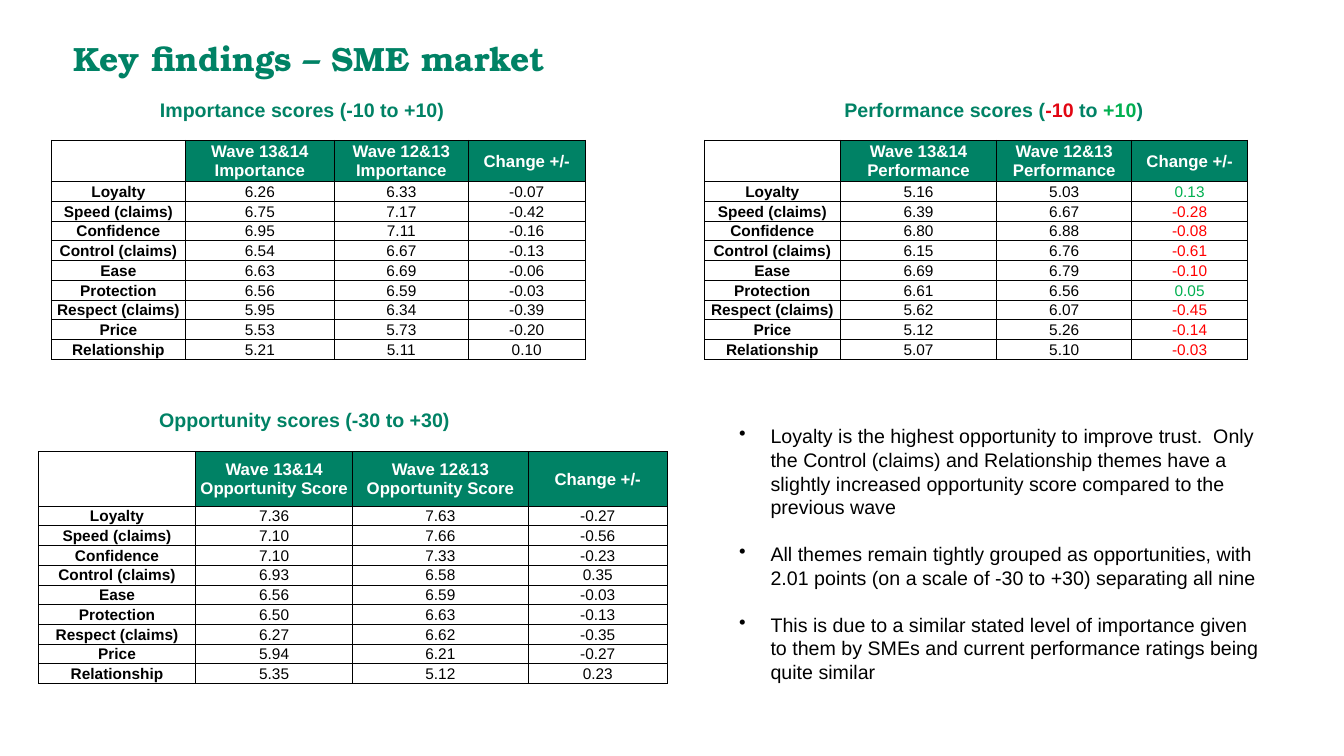
from dataclasses import dataclass

from lxml.etree import SubElement
from pptx import Presentation
from pptx.dml.color import RGBColor
from pptx.enum.text import MSO_ANCHOR as Anchor, MSO_AUTO_SIZE as AutoSize, PP_ALIGN as Align
from pptx.oxml.ns import qn
from pptx.util import Cm, Pt


@dataclass(frozen=True)
class Theme:
    green: str = "008265"
    gain: str = "00B050"
    loss: str = "FF0000"
    scale_red: str = "E20613"
    black: str = "000000"
    white: str = "FFFFFF"
    title_font: str = "TeX Gyre Bonum"
    body_font: str = "Arial"
    title_size: int = 24
    text_size: int = 14
    header_size: int = 12
    score_size: int = 11
    border: float = 0.5


THEME = Theme()

THEMES = ["Loyalty", "Speed (claims)", "Confidence", "Control (claims)", "Ease",
          "Protection", "Respect (claims)", "Price", "Relationship"]

# Scores per theme: wave 13&14, then wave 12&13
IMPORTANCE = [(6.26, 6.33), (6.75, 7.17), (6.95, 7.11), (6.54, 6.67), (6.63, 6.69),
              (6.56, 6.59), (5.95, 6.34), (5.53, 5.73), (5.21, 5.11)]
PERFORMANCE = [(5.16, 5.03), (6.39, 6.67), (6.80, 6.88), (6.15, 6.76), (6.69, 6.79),
               (6.61, 6.56), (5.62, 6.07), (5.12, 5.26), (5.07, 5.10)]
OPPORTUNITY = [(7.36, 7.63), (7.10, 7.66), (7.10, 7.33), (6.93, 6.58), (6.56, 6.59),
               (6.50, 6.63), (6.27, 6.62), (5.94, 6.21), (5.35, 5.12)]

FINDINGS = [
    "Loyalty is the highest opportunity to improve trust.  Only the Control (claims) and "
    "Relationship themes have a slightly increased opportunity score compared to the "
    "previous wave",
    "All themes remain tightly grouped as opportunities, with 2.01 points (on a scale of "
    "-30 to +30) separating all nine",
    "This is due to a similar stated level of importance given to them by SMEs and current "
    "performance ratings being quite similar",
]


def write(paragraph, text, size=THEME.text_size, color=THEME.black, bold=False,
          font=THEME.body_font, align=Align.LEFT):
    paragraph.alignment = align
    run = paragraph.add_run()
    run.text = text
    run.font.size = Pt(size)
    run.font.bold = bold
    run.font.name = font
    run.font.color.rgb = RGBColor.from_string(color)


def add_bullet(paragraph):
    props = paragraph._p.get_or_add_pPr()
    props.set("marL", str(Cm(1.42)))
    props.set("indent", str(Cm(-0.79)))
    SubElement(SubElement(props, qn("a:buClr")), qn("a:srgbClr"), val=THEME.black)
    SubElement(props, qn("a:buChar"), char="•")


def add_borders(cell):
    props = cell._tc.get_or_add_tcPr()
    for position, side in enumerate(("a:lnL", "a:lnR", "a:lnT", "a:lnB")):
        line = props.makeelement(qn(side), {"w": str(Pt(THEME.border))})
        fill = SubElement(line, qn("a:solidFill"))
        SubElement(fill, qn("a:srgbClr"), val=THEME.black)
        props.insert(position, line)


def add_text_box(slide, left, top, width, height):
    frame = slide.shapes.add_textbox(Cm(left), Cm(top), Cm(width), Cm(height)).text_frame
    frame.word_wrap = True
    return frame


def add_heading(slide, left, top, width, parts):
    paragraph = add_text_box(slide, left, top, width, 0.86).paragraphs[0]
    for text, color in parts:
        write(paragraph, text, color=color, bold=True)


def fill_cell(cell, text, fill=None, **text_format):
    cell.margin_left = cell.margin_right = cell.margin_top = Cm(0.03)
    cell.margin_bottom = 0
    cell.vertical_anchor = Anchor.MIDDLE
    if fill:
        cell.fill.solid()
        cell.fill.fore_color.rgb = RGBColor.from_string(fill)
    else:
        cell.fill.background()
    add_borders(cell)
    if text:
        write(cell.text_frame.paragraphs[0], text, align=Align.CENTER, **text_format)


def add_score_table(slide, left, top, widths, measure, scores,
                    header_height=0.99, color_changes=False):
    row_height = 0.46
    height = header_height + row_height * len(scores)
    table = slide.shapes.add_table(len(scores) + 1, len(widths), Cm(left), Cm(top),
                                   Cm(sum(widths)), Cm(height)).table
    for column, width in zip(table.columns, widths):
        column.width = Cm(width)
    for number, row in enumerate(table.rows):
        row.height = Cm(row_height if number else header_height)

    # Header row
    headers = ["", f"Wave 13&14 {measure}", f"Wave 12&13 {measure}", "Change +/-"]
    for column, header in enumerate(headers):
        fill_cell(table.cell(0, column), header, fill=THEME.green if header else None,
                  size=THEME.header_size, color=THEME.white, bold=True)

    # One row per theme, with the change worked out from the two waves
    for row, (name, (current, previous)) in enumerate(zip(THEMES, scores), start=1):
        change = current - previous
        change_color = THEME.gain if change > 0 else THEME.loss
        values = [name] + [f"{score:.2f}" for score in (current, previous, change)]
        for column, value in enumerate(values):
            colored = color_changes and column == 3
            fill_cell(table.cell(row, column), value, size=THEME.score_size,
                      bold=column == 0, color=change_color if colored else THEME.black)


def add_title(slide, text):
    title = slide.shapes.title
    title.left, title.top, title.width, title.height = Cm(1.85), Cm(0.28), Cm(16.48), Cm(2.46)
    frame = title.text_frame
    frame.margin_left = frame.margin_right = frame.margin_top = frame.margin_bottom = 0
    frame.vertical_anchor = Anchor.TOP
    frame.auto_size = AutoSize.NONE
    frame.paragraphs[0].line_spacing = 1.67
    write(frame.paragraphs[0], text, size=THEME.title_size, color=THEME.green, bold=True,
          font=THEME.title_font)


def add_findings(slide):
    frame = add_text_box(slide, 17.75, 10.57, 14.4, 7.44)
    for number, finding in enumerate(FINDINGS):
        paragraph = frame.add_paragraph() if number else frame.paragraphs[0]
        if number:
            paragraph.space_before = Pt(16.8)
        add_bullet(paragraph)
        write(paragraph, finding)


def main():
    deck = Presentation()
    deck.slide_width, deck.slide_height = Cm(33.87), Cm(19.05)
    slide = deck.slides.add_slide(deck.slide_layouts[5])
    add_title(slide, "Key findings – SME market")

    # Importance
    add_heading(slide, 3.78, 2.34, 8, [("Importance scores (-10 to +10)", THEME.green)])
    add_score_table(slide, 1.3, 3.53, [3.37, 3.76, 3.37, 2.95], "Importance", IMPORTANCE)

    # Performance
    add_heading(slide, 21.03, 2.34, 8.31, [
        ("Performance scores (", THEME.green), ("-10 ", THEME.scale_red),
        ("to ", THEME.green), ("+10", THEME.gain), (")", THEME.green)])
    add_score_table(slide, 17.75, 3.53, [3.43, 3.94, 3.4, 2.92], "Performance", PERFORMANCE,
                    color_changes=True)

    # Opportunity
    add_heading(slide, 3.76, 10.16, 8.74, [("Opportunity scores (-30 to +30)", THEME.green)])
    add_score_table(slide, 0.97, 11.38, [3.96, 3.96, 4.42, 3.51], "Opportunity Score",
                    OPPORTUNITY, header_height=1.37)

    add_findings(slide)
    deck.save("out.pptx")


if __name__ == "__main__":
    main()
